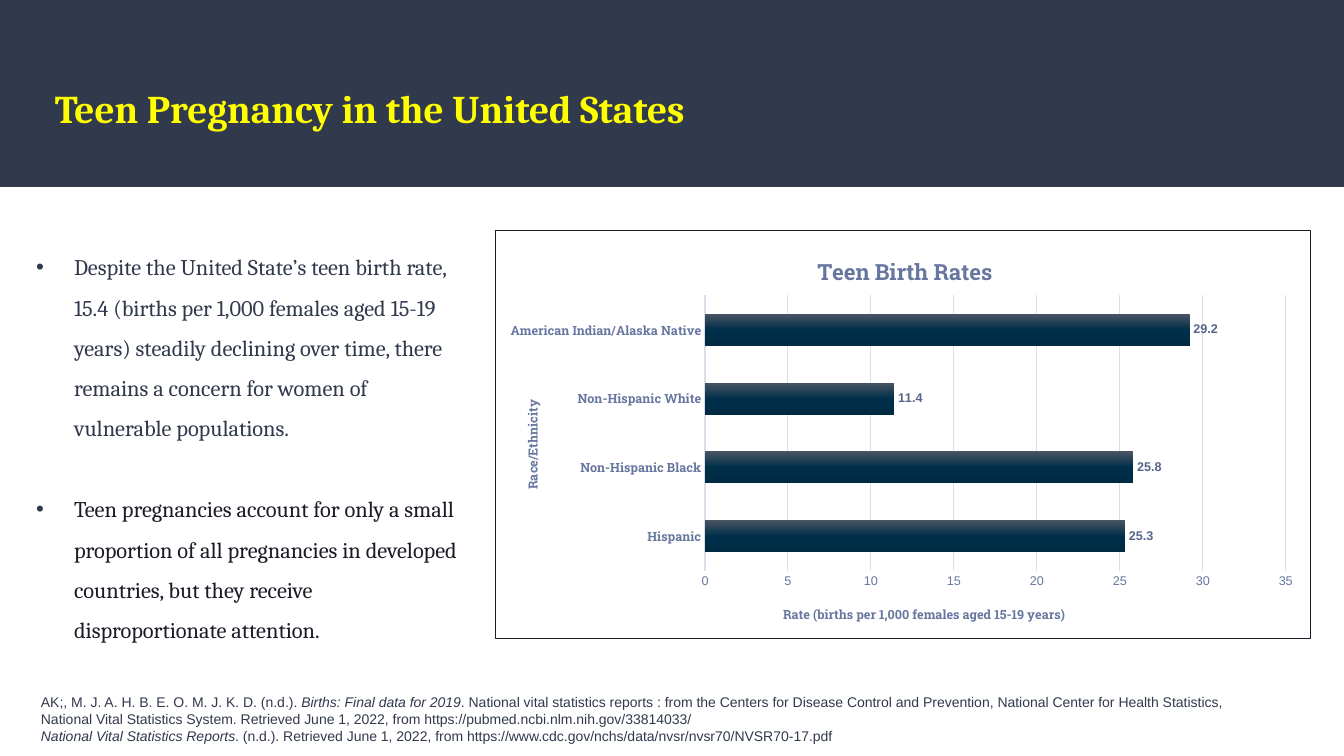
"""Build a slide on teen pregnancy in the United States with a bar chart of birth rates."""
import dataclasses

import pptx
import pptx.chart.data
import pptx.dml.color
import pptx.enum.chart
import pptx.enum.shapes
import pptx.oxml
import pptx.oxml.ns
import pptx.util

EMU_PER_PX = 914400 / 100.8


@dataclasses.dataclass(frozen=True)
class Theme:
    band: str = "31394D"
    title: str = "FFFF00"
    text: str = "31394D"
    dark: str = "191C26"
    axis: str = "66769E"
    label: str = "566488"
    grid: str = "DCDFE9"
    bar_top: str = "4B5564"
    bar_middle: str = "002F4A"
    bar_bottom: str = "002A42"
    serif: str = "Cambria"
    sans: str = "Arial"
    slab: str = "Roboto Slab"
    title_size: int = 28
    body_size: int = 16
    chart_title_size: int = 16
    source_size: int = 10
    axis_size: int = 9


THEME = Theme()
BULLETS = [
    ("Despite the United State’s teen birth rate, 15.4 (births per 1,000 females aged 15-19 years) "
     "steadily declining over time, there remains a concern for women of vulnerable populations.",
     THEME.text),
    ("Teen pregnancies account for only a small proportion of all pregnancies in developed "
     "countries, but they receive disproportionate attention.", THEME.dark),
]
SOURCES = [
    [("AK;, M. J. A. H. B. E. O. M. J. K. D. (n.d.). ", False),
     ("Births: Final data for 2019", True),
     (". National vital statistics reports : from the Centers for Disease Control and Prevention, "
      "National Center for Health Statistics, National Vital Statistics System. Retrieved June 1, "
      "2022, from https://pubmed.ncbi.nlm.nih.gov/33814033/", False)],
    [("National Vital Statistics Reports", True),
     (". (n.d.). Retrieved June 1, 2022, from "
      "https://www.cdc.gov/nchs/data/nvsr/nvsr70/NVSR70-17.pdf", False)],
]
BIRTH_RATES = {
    "Hispanic": 25.3,
    "Non-Hispanic Black": 25.8,
    "Non-Hispanic White": 11.4,
    "American Indian/Alaska Native": 29.2,
}


def px(length):
    """Turn a length in px into EMU."""
    return pptx.util.Emu(round(length * EMU_PER_PX))


def rgb(value):
    """Turn a hex string into a colour."""
    return pptx.dml.color.RGBColor.from_string(value)


def xml(markup):
    """Parse markup that uses the a: and c: prefixes."""
    head, tail = markup.split(">", 1)
    slash = "/" if head.endswith("/") else ""
    return pptx.oxml.parse_xml(f"{head.rstrip('/')} {pptx.oxml.ns.nsdecls('a', 'c')}{slash}>{tail}")


def style_font(font, size, color, name, bold=False, italic=False):
    """Set the format of a font."""
    font.size = pptx.util.Pt(size)
    font.color.rgb = rgb(color)
    font.name = name
    font.bold = bold
    font.italic = italic


def add_run(paragraph, text, **style):
    """Add a formatted run to a paragraph."""
    run = paragraph.add_run()
    run.text = text
    style_font(run.font, **style)


def add_text_frame(slide, left, top, width, height, inset_x=10, inset_y=5):
    """Add a wrapping text box and return its text frame."""
    frame = slide.shapes.add_textbox(px(left), px(top), px(width), px(height)).text_frame
    frame.word_wrap = True
    frame.margin_left = frame.margin_right = px(inset_x)
    frame.margin_top = frame.margin_bottom = px(inset_y)
    return frame


def next_paragraph(frame, index):
    """Return the first paragraph of a frame, or a new one after it."""
    return frame.add_paragraph() if index else frame.paragraphs[0]


def add_band(slide):
    """Add the dark band behind the title."""
    shape = slide.shapes.add_shape(
        pptx.enum.shapes.MSO_SHAPE.RECTANGLE, 0, 0, px(1344), px(187))
    shape.shadow.inherit = False
    shape.fill.solid()
    shape.fill.fore_color.rgb = rgb(THEME.band)
    shape.line.fill.background()


def add_title(slide, text):
    """Add the slide title."""
    frame = add_text_frame(slide, 45, 74, 1252, 92, inset_y=10)
    add_run(frame.paragraphs[0], text, size=THEME.title_size, color=THEME.title,
            name=THEME.serif, bold=True)


def add_bullets(slide, bullets):
    """Add the bulleted body text."""
    frame = add_text_frame(slide, 23, 227, 460, 430, inset_x=13, inset_y=13)
    for index, (text, color) in enumerate(bullets):
        paragraph = next_paragraph(frame, index)
        properties = paragraph._p.get_or_add_pPr()
        properties.set("marL", str(px(38)))
        properties.set("indent", str(px(-38)))
        properties.append(xml(f'<a:buClr><a:srgbClr val="{THEME.text}"/></a:buClr>'))
        properties.append(xml(f'<a:buFont typeface="{THEME.sans}"/>'))
        properties.append(xml('<a:buChar char="•"/>'))
        paragraph.line_spacing = 1.5
        if index:
            paragraph.space_before = pptx.util.Pt(29)
        add_run(paragraph, text, size=THEME.body_size, color=color, name=THEME.serif)


def add_sources(slide, sources):
    """Add the references at the foot of the slide."""
    frame = add_text_frame(slide, 31, 689, 1233, 62)
    for index, runs in enumerate(sources):
        paragraph = next_paragraph(frame, index)
        for text, italic in runs:
            add_run(paragraph, text, size=THEME.source_size, color=THEME.text,
                    name=THEME.sans, italic=italic)


def place(element, index, target="", **fractions):
    """Give a chart part a manual layout in fractions of the chart."""
    for layout in element.findall(pptx.oxml.ns.qn("c:layout")):
        element.remove(layout)
    modes = '<c:xMode val="edge"/><c:yMode val="edge"/>'
    values = "".join(f'<c:{key} val="{value}"/>' for key, value in fractions.items())
    element.insert(index, xml(
        f"<c:layout><c:manualLayout>{target}{modes}{values}</c:manualLayout></c:layout>"))


def set_chart_text(title, text, size, x, y):
    """Write and place a chart or axis title."""
    add_run(title.text_frame.paragraphs[0], text, size=size, color=THEME.axis,
            name=THEME.slab, bold=True)
    place(title._element, 1, x=x, y=y)


def style_axes(chart):
    """Format both axes and the gridlines."""
    none = pptx.enum.chart.XL_TICK_MARK.NONE
    category, value = chart.category_axis, chart.value_axis
    for axis, name, bold in ((category, THEME.slab, True), (value, THEME.sans, False)):
        axis.major_tick_mark = axis.minor_tick_mark = none
        style_font(axis.tick_labels.font, THEME.axis_size, THEME.axis, name, bold)
    category.has_major_gridlines = False
    category.format.line.color.rgb = rgb(THEME.grid)
    category.format.line.width = pptx.util.Pt(1)
    value.minimum_scale, value.maximum_scale, value.major_unit = 0, 35, 5
    value.format.line.fill.background()
    value.major_gridlines.format.line.color.rgb = rgb(THEME.grid)
    value.major_gridlines.format.line.width = pptx.util.Pt(0.75)


def style_bars(plot):
    """Format the bars and their value labels."""
    plot.gap_width, plot.overlap, plot.vary_by_categories = 115, -20, False
    stops = zip((0, 50000, 100000), (THEME.bar_top, THEME.bar_middle, THEME.bar_bottom))
    marks = "".join(f'<a:gs pos="{position}"><a:srgbClr val="{color}"/></a:gs>'
                    for position, color in stops)
    plot.series[0]._element.get_or_add_spPr().insert(0, xml(
        f'<a:gradFill><a:gsLst>{marks}</a:gsLst><a:lin ang="5400000" scaled="0"/></a:gradFill>'))
    plot.has_data_labels = True
    labels = plot.data_labels
    labels.show_value = True
    labels.position = pptx.enum.chart.XL_LABEL_POSITION.OUTSIDE_END
    style_font(labels.font, THEME.axis_size, THEME.label, THEME.sans, bold=True)


def add_rate_chart(slide, rates):
    """Add the bar chart of birth rates."""
    data = pptx.chart.data.CategoryChartData()
    data.categories = list(rates)
    data.add_series("Series 1", list(rates.values()))
    chart = slide.shapes.add_chart(pptx.enum.chart.XL_CHART_TYPE.BAR_CLUSTERED,
                                   px(495), px(230), px(816), px(409), data).chart
    style_font(chart.font, THEME.source_size, THEME.text, THEME.sans)
    chart.has_legend = False
    style_axes(chart)
    style_bars(chart.plots[0])
    set_chart_text(chart.chart_title, "Teen Birth Rates", THEME.chart_title_size, 0.39, 0.05)
    set_chart_text(chart.category_axis.axis_title, "Race/Ethnicity", THEME.axis_size, 0.03, 0.41)
    set_chart_text(chart.value_axis.axis_title, "Rate (births per 1,000 females aged 15-19 years)",
                   THEME.axis_size, 0.35, 0.91)
    space = chart._chartSpace
    place(space.chart.plotArea, 0, '<c:layoutTarget val="inner"/>', x=0.257, y=0.159, w=0.713, h=0.675)
    space.chart.addnext(xml(
        f'<c:spPr><a:noFill/><a:ln w="12700"><a:solidFill><a:srgbClr val="{THEME.dark}"/>'
        '</a:solidFill></a:ln></c:spPr>'))


def main():
    """Build and save the presentation."""
    presentation = pptx.Presentation()
    presentation.slide_width, presentation.slide_height = px(1344), px(756)
    slide = presentation.slides.add_slide(presentation.slide_layouts[6])
    add_band(slide)
    add_title(slide, "Teen Pregnancy in the United States")
    add_bullets(slide, BULLETS)
    add_rate_chart(slide, BIRTH_RATES)
    add_sources(slide, SOURCES)
    presentation.save("out.pptx")


if __name__ == "__main__":
    main()
